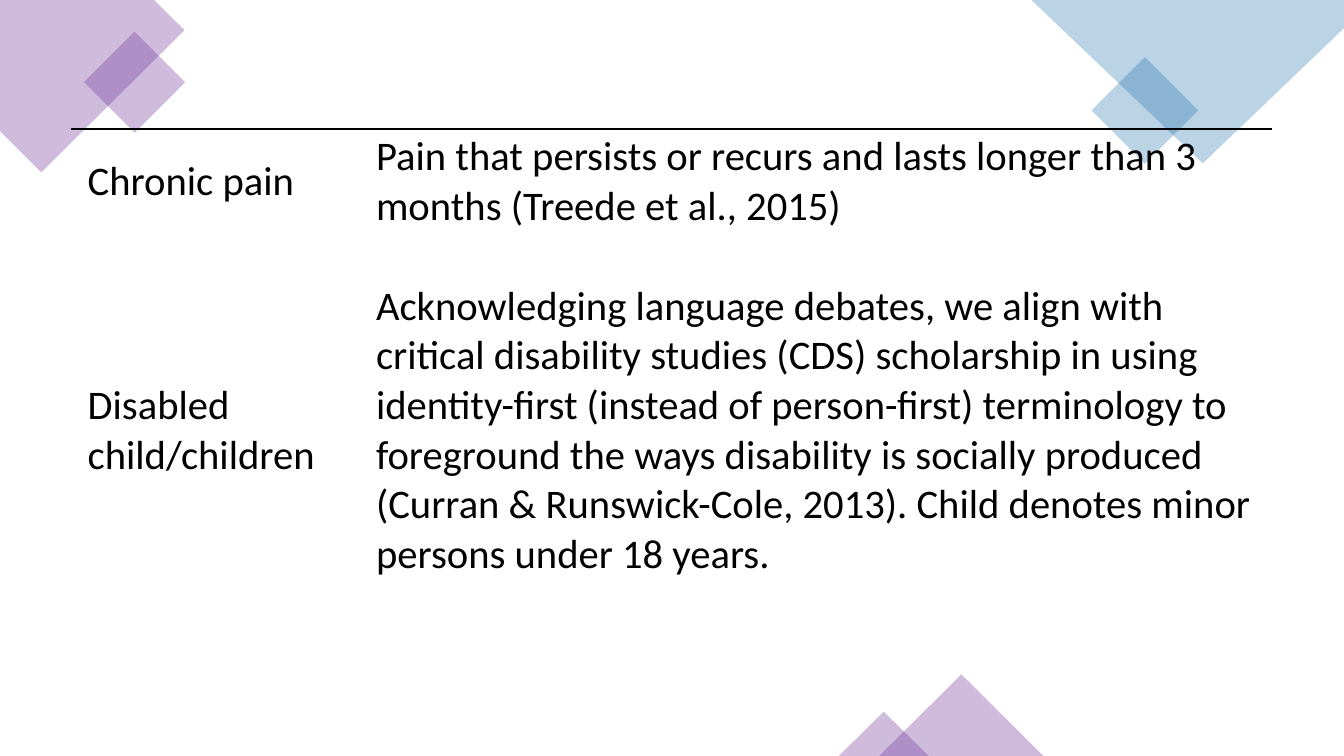
from lxml.etree import SubElement
from pptx import Presentation
from pptx.dml.color import RGBColor
from pptx.enum.shapes import MSO_SHAPE
from pptx.enum.text import MSO_ANCHOR
from pptx.oxml.ns import qn
from pptx.util import Inches, Pt

PURPLE = RGBColor(0x62, 0x24, 0x8F)
BLUE = RGBColor(0x1D, 0x6F, 0xA9)
BLACK = RGBColor(0, 0, 0)

CORNERS = [
    ([(0, 0), (1.53, 0), (1.83, 0.3), (0.41, 1.71), (0, 1.3)], PURPLE),
    ([(10.23, 0), (13.33, 0), (13.33, 0.28), (11.93, 1.62)], BLUE),
]
ACCENTS = [
    (MSO_SHAPE.RECTANGLE, (0.98, 0.46, 0.71, 0.71), 315, PURPLE),
    (MSO_SHAPE.RECTANGLE, (10.98, 0.72, 0.75, 0.75), 315, BLUE),
    (MSO_SHAPE.ISOSCELES_TRIANGLE, (8.72, 6.69, 1.63, 0.81), 0, PURPLE),
    (MSO_SHAPE.ISOSCELES_TRIANGLE, (8.32, 7.06, 0.89, 0.44), 0, PURPLE),
]
DEFINITIONS = [
    ("Chronic pain",
     "Pain that persists or recurs and lasts longer than 3 months "
     "(Treede et al., 2015)"),
    ("Disabled child/children",
     "Acknowledging language debates, we align with critical disability "
     "studies (CDS) scholarship in using identity-first (instead of "
     "person-first) terminology to foreground the ways disability is "
     "socially produced (Curran & Runswick-Cole, 2013). Child denotes "
     "minor persons under 18 years."),
]
COL_WIDTHS = [2.86, 9.06]
ROW_HEIGHTS = [1.28, 3.66]


def tint(sp, color):
    sp.shadow.inherit = False
    sp.fill.solid()
    sp.fill.fore_color.rgb = color
    sp.line.fill.background()
    srgb = next(sp.fill._xPr.iter(qn("a:srgbClr")))
    SubElement(srgb, qn("a:alpha"), val="30000")


def set_borders(cell, top):
    tcPr = cell._tc.get_or_add_tcPr()
    for side in ("lnL", "lnR", "lnT", "lnB"):
        if side == "lnT" and top:
            ln = SubElement(tcPr, qn("a:lnT"), w=str(Pt(1)))
            fill = SubElement(ln, qn("a:solidFill"))
            SubElement(fill, qn("a:srgbClr"), val=str(BLACK))
        else:
            ln = SubElement(tcPr, qn(f"a:{side}"), w="0")
            SubElement(ln, qn("a:noFill"))


def format_cell(cell, text, top):
    set_borders(cell, top)
    cell.fill.background()
    cell.vertical_anchor = MSO_ANCHOR.MIDDLE
    cell.margin_left, cell.margin_right = Inches(0.17), Inches(0.12)
    cell.margin_top, cell.margin_bottom = 0, Inches(0.24)
    cell.text_frame.text = text
    font = cell.text_frame.paragraphs[0].runs[0].font
    font.name = "Calibri"
    font.size = Pt(29)
    font.color.rgb = BLACK


def main():
    prs = Presentation()
    prs.slide_width, prs.slide_height = Inches(13.33), Inches(7.5)
    s = prs.slides.add_slide(prs.slide_layouts[6])

    for points, color in CORNERS:
        start, *rest = [(Inches(x), Inches(y)) for x, y in points]
        builder = s.shapes.build_freeform(*start)
        builder.add_line_segments(rest)
        tint(builder.convert_to_shape(), color)

    for kind, box, angle, color in ACCENTS:
        sp = s.shapes.add_shape(kind, *map(Inches, box))
        sp.rotation = angle
        tint(sp, color)

    frame = s.shapes.add_table(
        len(ROW_HEIGHTS), len(COL_WIDTHS), Inches(0.7), Inches(1.28),
        Inches(sum(COL_WIDTHS)), Inches(sum(ROW_HEIGHTS)))
    table = frame.table
    table.first_row = table.horz_banding = False
    for col, width in zip(table.columns, COL_WIDTHS):
        col.width = Inches(width)
    for i, (row, height) in enumerate(zip(table.rows, ROW_HEIGHTS)):
        row.height = Inches(height)
        for cell, text in zip(row.cells, DEFINITIONS[i]):
            format_cell(cell, text, top=i == 0)

    prs.save("out.pptx")


if __name__ == "__main__":
    main()
